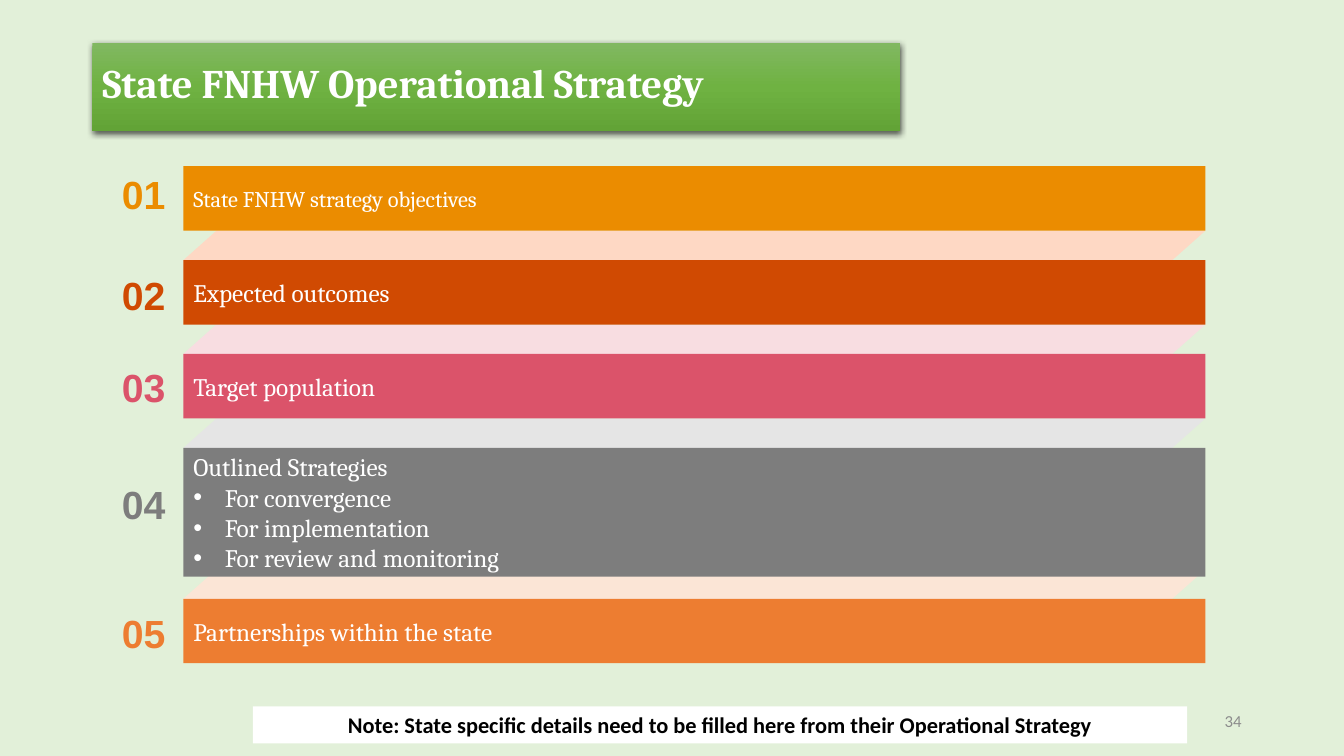
"""Build the State FNHW Operational Strategy slide with five numbered bars."""
from copy import deepcopy
from dataclasses import dataclass

from lxml.etree import SubElement
from pptx import Presentation
from pptx.dml.color import RGBColor
from pptx.enum.shapes import MSO_SHAPE
from pptx.enum.text import MSO_ANCHOR, MSO_AUTO_SIZE, PP_ALIGN
from pptx.oxml.ns import qn
from pptx.util import Pt


@dataclass(frozen=True)
class Theme:
    background: str = "E2F0D9"
    white: str = "FFFFFF"
    black: str = "000000"
    page_number: str = "8C8C8C"
    banner: tuple = ("81B861", "6FB242", "62A336")
    bars: tuple = ("EB8C00", "D04A02", "DB536A", "7D7D7D", "ED7D31")
    bands: tuple = ("FED8C4", "F8DDE1", "E5E5E5", "FBE5D6")
    serif: str = "Cambria"
    sans: str = "Calibri"
    numeral: str = "Arial"
    title_size: int = 29
    number_size: int = 28
    bar_size: int = 18
    first_bar_size: int = 16
    note_size: int = 16
    page_size: int = 12


theme = Theme()


def add_box(page, kind, place, color=None):
    """Add a preset shape, or a text box when kind is None."""
    left, top, width, height = (Pt(value) for value in place)
    if kind is None:
        box = page.shapes.add_textbox(left, top, width, height)
    else:
        box = page.shapes.add_shape(kind, left, top, width, height)
        box.shadow.inherit = False
        box.line.fill.background()
    if color:
        box.fill.solid()
        box.fill.fore_color.rgb = RGBColor.from_string(color)
    return box


def write(box, text, name, size, color, bold=False, align=PP_ALIGN.LEFT, anchor=MSO_ANCHOR.MIDDLE):
    """Put formatted text in a box and return its text frame."""
    frame = box.text_frame
    frame.word_wrap = True
    frame.vertical_anchor = anchor
    frame.text = text
    for para in frame.paragraphs:
        para.alignment = align
        for span in para.runs:
            span.font.name = name
            span.font.size = Pt(size)
            span.font.bold = bold
            span.font.color.rgb = RGBColor.from_string(color)
    return frame


deck = Presentation()
deck.slide_width, deck.slide_height = Pt(960), Pt(540)
page = deck.slides.add_slide(deck.slide_layouts[6])
page.background.fill.solid()
page.background.fill.fore_color.rgb = RGBColor.from_string(theme.background)

number_box = add_box(page, None, (678, 500.4, 216, 28.8))
write(number_box, "34", theme.sans, theme.page_size, theme.page_number, align=PP_ALIGN.RIGHT)

bar_left, bar_width, band_height = 131, 730, 21
strategies = "\n".join(
    ("Outlined Strategies", "For convergence", "For implementation", "For review and monitoring")
)
bars = (
    ("State FNHW strategy objectives", 118.7, 46, 121.7),
    ("Expected outcomes", 185.8, 46, 193.7),
    ("Target population", 252.8, 46, 259.2),
    (strategies, 319.9, 92, 342.7),
    ("Partnerships within the state", 427.7, 46, 434.9),
)

for (text, top, height, number_top), color in zip(bars[1:], theme.bands):
    place = (bar_left, top - band_height, bar_width, band_height)
    band = add_box(page, MSO_SHAPE.PARALLELOGRAM, place, color)
    band.adjustments[0] = 1.125

for index, (text, top, height, number_top) in enumerate(bars):
    color = theme.bars[index]
    bar = add_box(page, MSO_SHAPE.RECTANGLE, (bar_left, top, bar_width, height), color)
    size = theme.bar_size if index else theme.first_bar_size
    frame = write(bar, text, theme.serif, size, theme.white)
    frame.margin_top = frame.margin_bottom = Pt(5)
    for para in frame.paragraphs[1:]:
        properties = para._p.get_or_add_pPr()
        properties.set("marL", str(Pt(22.5)))
        properties.set("indent", str(-Pt(22.5)))
        SubElement(properties, qn("a:buFont"), typeface=theme.numeral)
        SubElement(properties, qn("a:buChar"), char="•")

    numeral = add_box(page, None, (87.1, number_top, 31.8, 33.8))
    frame = write(numeral, f"{index + 1:02}", theme.numeral, theme.number_size, color,
                  bold=True, anchor=MSO_ANCHOR.BOTTOM)
    frame.margin_left = frame.margin_right = frame.margin_top = frame.margin_bottom = 0
    frame.auto_size = MSO_AUTO_SIZE.SHAPE_TO_FIT_TEXT
    frame.paragraphs[0].space_after = Pt(5.1)

note = add_box(page, MSO_SHAPE.RECTANGLE, (180.6, 504.5, 667.4, 26.6), theme.white)
frame = write(note, "Note: State specific details need to be filled here from their Operational Strategy",
              theme.sans, theme.note_size, theme.black, bold=True,
              align=PP_ALIGN.CENTER, anchor=MSO_ANCHOR.TOP)
frame.auto_size = MSO_AUTO_SIZE.SHAPE_TO_FIT_TEXT

banner = add_box(page, MSO_SHAPE.RECTANGLE, (66, 30.7, 576.8, 62.8))
banner.fill.gradient()
banner.fill.gradient_angle = 270
stop_list = banner.element.spPr.find(".//" + qn("a:gsLst"))
stop_list.insert(1, deepcopy(stop_list[0]))
for index, (stop, color) in enumerate(zip(banner.fill.gradient_stops, theme.banner)):
    stop.position = index / 2
    stop.color.rgb = RGBColor.from_string(color)

effects = banner.element.spPr.find(qn("a:effectLst"))
shadow = SubElement(effects, qn("a:outerShdw"), blurRad=str(Pt(4.5)), dist=str(Pt(1.5)),
                    dir="5400000", algn="ctr", rotWithShape="0")
shade = SubElement(shadow, qn("a:srgbClr"), val=theme.black)
SubElement(shade, qn("a:alpha"), val="63000")

title = add_box(page, None, (66, 30.7, 576.8, 60.5))
frame = write(title, "State FNHW Operational Strategy", theme.serif, theme.title_size,
              theme.white, bold=True)
frame.paragraphs[0].line_spacing = 0.9

deck.save("out.pptx")
